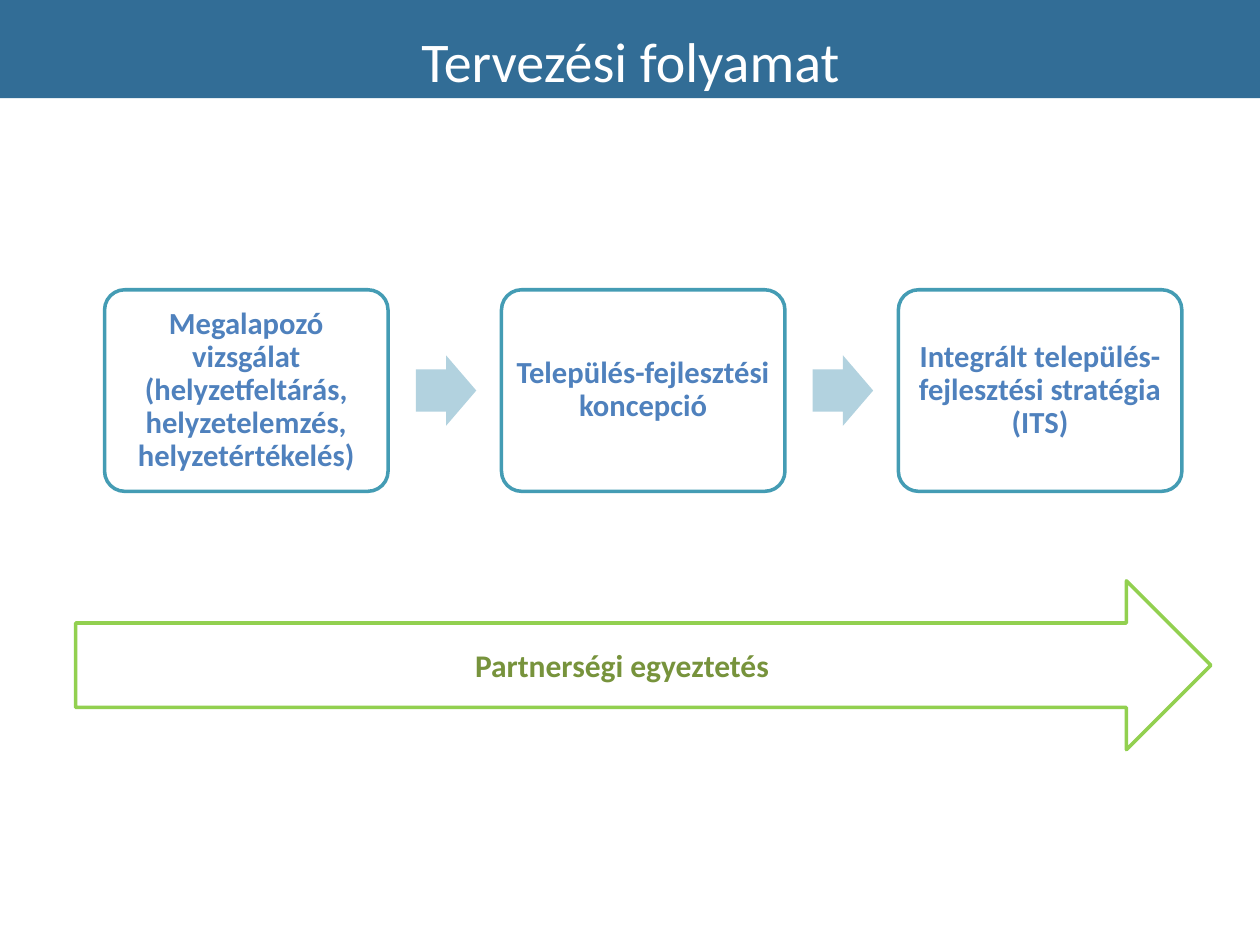
from lxml import etree
from pptx import Presentation
from pptx.dml.color import RGBColor
from pptx.enum.shapes import MSO_SHAPE
from pptx.enum.text import MSO_ANCHOR, PP_ALIGN
from pptx.oxml.ns import qn
from pptx.util import Inches, Pt

RECTANGLE = MSO_SHAPE.RECTANGLE
ROUNDED_RECTANGLE = MSO_SHAPE.ROUNDED_RECTANGLE
RIGHT_ARROW = MSO_SHAPE.RIGHT_ARROW
MIDDLE = MSO_ANCHOR.MIDDLE
CENTER = PP_ALIGN.CENTER

WHITE = RGBColor(0xFF, 0xFF, 0xFF)
BANNER_BLUE = RGBColor(0x14, 0x58, 0x87)
STEP_BORDER = RGBColor(0x44, 0x9C, 0xB4)
STEP_TEXT = RGBColor(0x4F, 0x81, 0xBD)
STEP_ARROW = RGBColor(0xB2, 0xD2, 0xDF)
PARTNER_BORDER = RGBColor(0x92, 0xD0, 0x50)
PARTNER_TEXT = RGBColor(0x77, 0x93, 0x3C)

STEPS = [
    "Megalapozó vizsgálat (helyzetfeltárás, helyzetelemzés, helyzetértékelés)",
    "Település-fejlesztési koncepció",
    "Integrált település-fejlesztési stratégia (ITS)",
]
STEP_LEFT = 0.83
STEP_PITCH = 3.15
ARROW_OFFSET = 2.47

presentation = Presentation()
presentation.slide_width = Inches(10)
presentation.slide_height = Inches(7.5)
slide = presentation.slides.add_slide(presentation.slide_layouts[6])


def add_shape(kind, left, top, width, height, fill=None, border=None):
    shape = slide.shapes.add_shape(
        kind, Inches(left), Inches(top), Inches(width), Inches(height))
    shape.shadow.inherit = False
    if fill is None:
        shape.fill.background()
    else:
        shape.fill.solid()
        shape.fill.fore_color.rgb = fill
    if border is None:
        shape.line.fill.background()
    else:
        shape.line.color.rgb = border
        shape.line.width = Pt(2)
    return shape


def write_text(shape, text, size, color, bold=False):
    frame = shape.text_frame
    frame.word_wrap = True
    paragraph = frame.paragraphs[0]
    paragraph.alignment = CENTER
    run = paragraph.add_run()
    run.text = text
    run.font.name = "Calibri"
    run.font.size = Pt(size)
    run.font.bold = bold
    run.font.color.rgb = color
    return paragraph


banner = add_shape(RECTANGLE, 0, 0, 10, 0.78, BANNER_BLUE)
banner_color = banner.fill._xPr.find(qn("a:solidFill"))[0]
etree.SubElement(banner_color, qn("a:alpha"), val="87000")

title = slide.shapes.add_textbox(
    Inches(1.33), Inches(0.16), Inches(7.35), Inches(0.64))
write_text(title, "Tervezési folyamat", 32, WHITE)

for index, text in enumerate(STEPS):
    left = STEP_LEFT + index * STEP_PITCH
    step = add_shape(ROUNDED_RECTANGLE, left, 2.3, 2.25, 1.6, WHITE, STEP_BORDER)
    step.adjustments[0] = 0.1
    frame = step.text_frame
    frame.vertical_anchor = MIDDLE
    frame.margin_left = frame.margin_right = Inches(0.07)
    frame.margin_top = frame.margin_bottom = Inches(0.07)
    paragraph = write_text(step, text, 17.5, STEP_TEXT, bold=True)
    paragraph.line_spacing = 0.9
    if index < len(STEPS) - 1:
        arrow = add_shape(
            RIGHT_ARROW, left + ARROW_OFFSET, 2.82, 0.48, 0.56, STEP_ARROW)
        arrow.adjustments[0] = 0.6
        arrow.adjustments[1] = 0.5

partnership = add_shape(
    RIGHT_ARROW, 0.6, 4.61, 9.01, 1.34, border=PARTNER_BORDER)
partnership.text_frame.vertical_anchor = MIDDLE
write_text(partnership, "Partnerségi egyeztetés", 18, PARTNER_TEXT, bold=True)

presentation.save("out.pptx")
